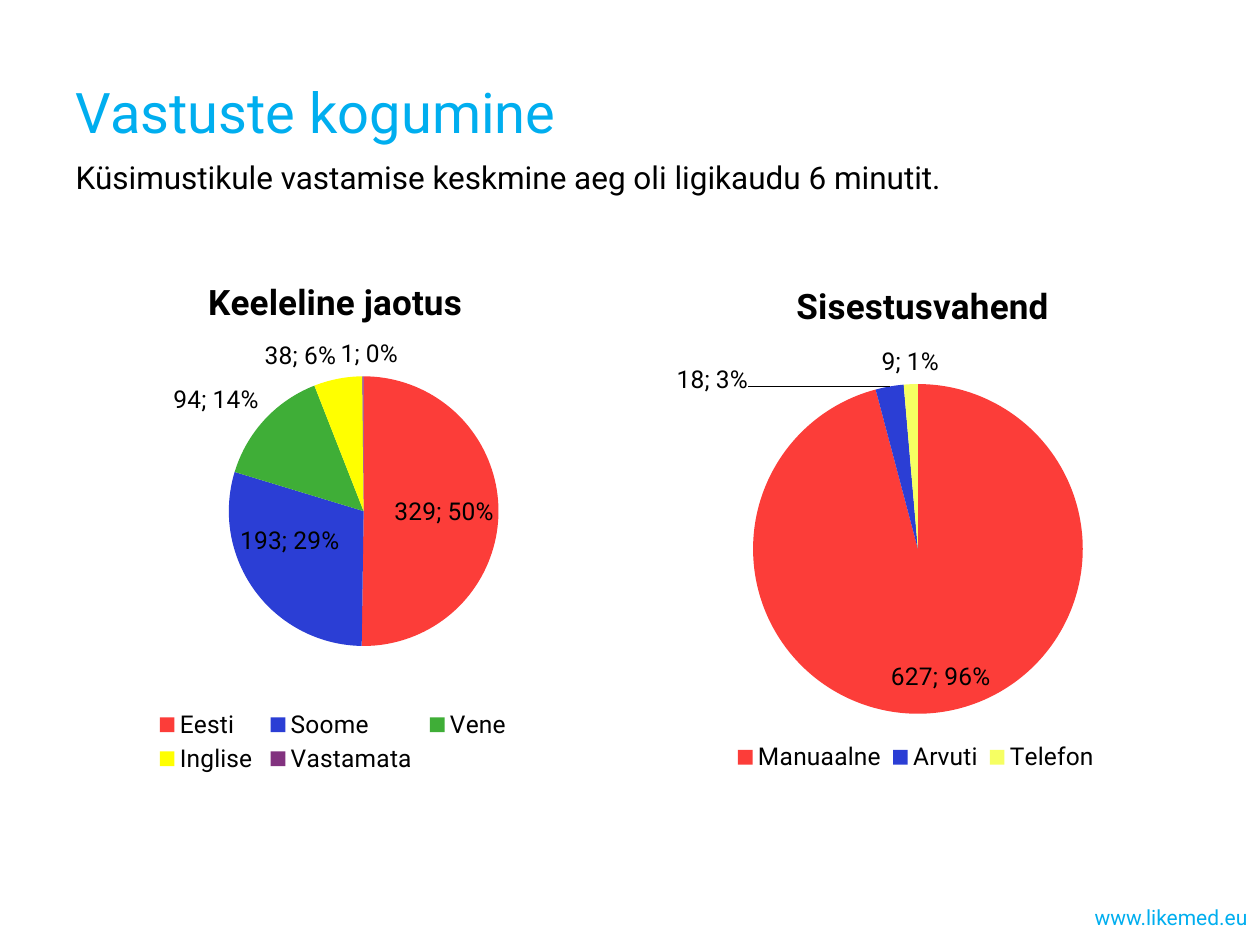
"""Build the slide on collected answers, with two pie charts."""
from dataclasses import dataclass

from pptx import Presentation
from pptx.chart.data import CategoryChartData
from pptx.dml.color import RGBColor
from pptx.enum.chart import XL_CHART_TYPE, XL_LABEL_POSITION, XL_LEGEND_POSITION
from pptx.enum.text import MSO_ANCHOR, PP_ALIGN
from pptx.oxml import parse_xml
from pptx.oxml.ns import nsdecls
from pptx.util import Pt

PIE = XL_CHART_TYPE.PIE
BEST_FIT = XL_LABEL_POSITION.BEST_FIT
BOTTOM = XL_LEGEND_POSITION.BOTTOM
TOP, MIDDLE = MSO_ANCHOR.TOP, MSO_ANCHOR.MIDDLE
LEFT, RIGHT, JUSTIFY = PP_ALIGN.LEFT, PP_ALIGN.RIGHT, PP_ALIGN.JUSTIFY
PX = 914400 // 126


@dataclass(frozen=True)
class Theme:
    font: str = "Roboto"
    accent: str = "00AEEF"
    ink: str = "000000"
    red: str = "FC3D39"
    blue: str = "2B3ED5"
    green: str = "3FAE37"
    yellow: str = "FFFF00"
    purple: str = "82327F"
    lemon: str = "F6FF62"
    title: int = 32
    body: int = 18
    footer: int = 12
    chart_title: int = 20
    chart: int = 14


T = Theme()


def set_font(font, size, color):
    font.name = T.font
    font.size = Pt(size)
    font.color.rgb = RGBColor.from_string(color)


def set_layout(parent, index, frame, box, target=""):
    for old in parent.xpath("c:layout"):
        parent.remove(old)
    x, y, w, h = box
    left, top, width, height = frame
    parent.insert(index, parse_xml(
        f'<c:layout {nsdecls("c")}><c:manualLayout>{target}'
        '<c:xMode val="edge"/><c:yMode val="edge"/>'
        f'<c:x val="{(x - left) / width:.3f}"/><c:y val="{(y - top) / height:.3f}"/>'
        f'<c:w val="{w / width:.3f}"/><c:h val="{h / height:.3f}"/>'
        '</c:manualLayout></c:layout>'))


prs = Presentation()
prs.slide_width, prs.slide_height = 1260 * PX, 945 * PX
s = prs.slides.add_slide(prs.slide_layouts[0])

texts = [
    (s.shapes.title, (63, 10, 1134, 203), "Vastuste kogumine",
     T.title, T.accent, LEFT, MIDDLE),
    (s.placeholders[1], (63, 152, 1134, 122),
     "Küsimustikule vastamise keskmine aeg oli ligikaudu 6 minutit.",
     T.body, T.ink, JUSTIFY, TOP),
    (s.shapes.add_textbox(0, 0, 0, 0), (861, 892, 399, 50), "www.likemed.eu",
     T.footer, T.accent, RIGHT, MIDDLE),
]
for sp, box, text, size, color, align, anchor in texts:
    sp.left, sp.top, sp.width, sp.height = (v * PX for v in box)
    tf = sp.text_frame
    tf.word_wrap = True
    tf.vertical_anchor = anchor
    p = tf.paragraphs[0]
    p.text = text
    p.alignment = align
    p.space_before = Pt(0)
    set_font(p.font, size, color)

pies = [
    {"title": "Keeleline jaotus", "frame": (63, 249, 530, 532),
     "title_box": (202, 272, 253, 41), "plot_box": (229, 376, 270, 270),
     "legend_box": (150, 706, 366, 72), "moved_labels": [],
     "slices": [("Eesti", 329, T.red), ("Soome", 193, T.blue), ("Vene", 94, T.green),
                ("Inglise", 38, T.yellow), ("Vastamata", 1, T.purple)]},
    {"title": "Sisestusvahend", "frame": (635, 249, 562, 532),
     "title_box": (790, 276, 252, 41), "plot_box": (753, 384, 330, 330),
     "legend_box": (726, 742, 380, 36), "moved_labels": [(1, -140, 16)],
     "slices": [("Manuaalne", 627, T.red), ("Arvuti", 18, T.blue),
                ("Telefon", 9, T.lemon)]},
]
SHOWN = ('<c:showLegendKey val="0"/><c:showVal val="1"/><c:showCatName val="0"/>'
         '<c:showSerName val="0"/><c:showPercent val="1"/><c:showBubbleSize val="0"/>'
         '<c:separator>; </c:separator>')

for pie in pies:
    frame = pie["frame"]
    names, values, colors = zip(*pie["slices"])
    data = CategoryChartData()
    data.categories = names
    data.add_series("Series 1", values)
    chart = s.shapes.add_chart(PIE, *(v * PX for v in frame), data).chart
    set_font(chart.font, T.chart, T.ink)

    chart.has_title = True
    p = chart.chart_title.text_frame.paragraphs[0]
    p.text = pie["title"]
    set_font(p.font, T.chart_title, T.ink)
    p.font.bold = True
    chart.has_legend = True
    chart.legend.position = BOTTOM
    chart.legend.include_in_layout = False

    plot = chart.plots[0]
    plot.vary_by_categories = True
    series = plot.series[0]
    for i, color in enumerate(colors):
        fill = series.points[i].format.fill
        fill.solid()
        fill.fore_color.rgb = RGBColor.from_string(color)

    labels = series.data_labels
    labels.show_value = True
    labels.show_percentage = True
    labels.position = BEST_FIT
    set_font(labels.font, T.chart, T.ink)
    root = chart.element
    dlbls = root.xpath(".//c:ser/c:dLbls")[0]
    separator = parse_xml(f'<c:separator {nsdecls("c")}>; </c:separator>')
    leader = dlbls.xpath("c:showLeaderLines")
    if leader:
        leader[0].addprevious(separator)
    else:
        dlbls.append(separator)
    for i, dx, dy in pie["moved_labels"]:
        dlbls.insert(0, parse_xml(
            f'<c:dLbl {nsdecls("c")}><c:idx val="{i}"/><c:layout><c:manualLayout>'
            f'<c:x val="{dx / frame[2]:.3f}"/><c:y val="{dy / frame[3]:.3f}"/>'
            f'</c:manualLayout></c:layout><c:dLblPos val="bestFit"/>{SHOWN}</c:dLbl>'))

    set_layout(root.xpath("c:chart/c:title")[0], 1, frame, pie["title_box"])
    set_layout(root.xpath(".//c:legend")[0], 1, frame, pie["legend_box"])
    set_layout(root.xpath(".//c:plotArea")[0], 0, frame, pie["plot_box"],
               '<c:layoutTarget val="inner"/>')

prs.save("out.pptx")
